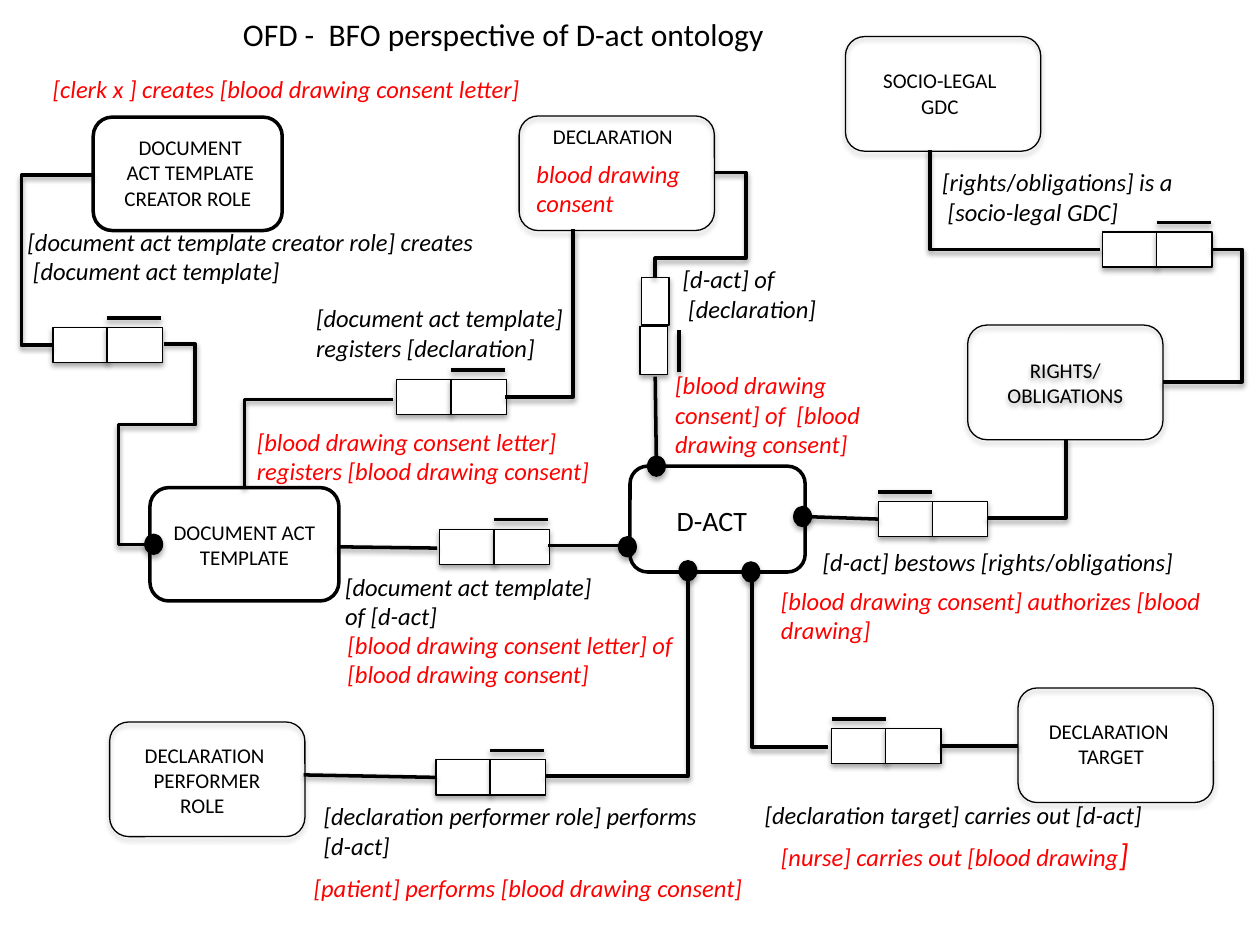
from dataclasses import dataclass
from lxml.etree import SubElement
from pptx import Presentation
from pptx.dml.color import RGBColor
from pptx.enum.shapes import MSO_CONNECTOR, MSO_SHAPE
from pptx.enum.text import MSO_ANCHOR, PP_ALIGN
from pptx.oxml.ns import qn
from pptx.util import Inches, Pt


@dataclass(frozen=True)
class Theme:
    font: str = "Calibri"
    black: RGBColor = RGBColor(0, 0, 0)
    white: RGBColor = RGBColor(255, 255, 255)
    red: RGBColor = RGBColor(255, 0, 0)
    title: int = 18
    act: int = 16
    relation: int = 14
    node: int = 12
    thick: float = 2
    thin: float = 0.75


T = Theme()
UNIT = Inches(0.1)  # the grid has 100 columns and 75 rows
CELL_W, CELL_H, PITCH = 4.4, 2.8, 4.3
NODE_W, NODE_H = 15.5, 9.1
DOT_W, DOT_H = 1.4, 1.6


def add_shadow(spPr, alpha):
    effects = spPr.find(qn("a:effectLst"))
    if effects is None:
        effects = SubElement(spPr, qn("a:effectLst"))
    shadow = SubElement(effects, qn("a:outerShdw"), blurRad="39400", dist="22900",
                        dir="5400000", rotWithShape="0")
    color = SubElement(shadow, qn("a:srgbClr"), val="000000")
    SubElement(color, qn("a:alpha"), val=str(alpha * 1000))


def write(tf, lines, size, color=T.black, italic=False, align=None):
    for i, line in enumerate(lines):
        p = tf.paragraphs[0] if i == 0 else tf.add_paragraph()
        p.alignment = align
        # slashes stay upright in italic labels
        for part in filter(None, line.partition("/") if italic else [line]):
            r = p.add_run()
            r.text = part
            fmt = {"name": T.font, "size": Pt(size), "italic": italic and part != "/"}
            for key, value in fmt.items():
                setattr(r.font, key, value)
            r.font.color.rgb = color


class Area:
    """A region of the slide; its parts are placed in grid units from its corner."""

    def __init__(self, shapes, left, top):
        self.shapes, self.left, self.top = shapes, left, top

    def at(self, x, y):
        return round((self.left + x) * UNIT), round((self.top + y) * UNIT)

    def shape(self, kind, x, y, w, h, fill=None, width=T.thin, shadow=True):
        sp = self.shapes.add_shape(kind, *self.at(x, y), round(w * UNIT), round(h * UNIT))
        if fill is None:
            sp.fill.background()
        else:
            sp.fill.solid()
            sp.fill.fore_color.rgb = fill
        sp.line.color.rgb, sp.line.width = T.black, Pt(width)
        sp.shadow.inherit = False
        if shadow:
            add_shadow(sp._element.spPr, 35)
        return sp

    def node(self, x, y):
        return self.shape(MSO_SHAPE.ROUNDED_RECTANGLE, x, y, NODE_W, NODE_H)

    def bold_node(self, x, y, w, h):
        return self.shape(MSO_SHAPE.FLOWCHART_ALTERNATE_PROCESS, x, y, w, h,
                          T.white, T.thick, False)

    def dot(self, x, y):
        self.shape(MSO_SHAPE.OVAL, x, y, DOT_W, DOT_H, T.black)

    def text(self, x, y, w, h, lines, size, wrap=True, **style):
        sp = self.shapes.add_textbox(*self.at(x, y), round(w * UNIT), round(h * UNIT))
        sp.text_frame.word_wrap = wrap
        write(sp.text_frame, lines, size, **style)
        return sp.text_frame

    def name(self, x, y, w, h, *lines, wrap=True):
        self.text(x, y, w, h, lines, T.node, wrap, align=PP_ALIGN.CENTER)

    def relation(self, x, y, w, h, *lines, color=T.black, wrap=True):
        return self.text(x, y, w, h, lines, T.relation, wrap, color=color, italic=True)

    def example(self, *args, **kwargs):
        return self.relation(*args, color=T.red, **kwargs)

    def line(self, start, end, kind=MSO_CONNECTOR.STRAIGHT):
        cxn = self.shapes.add_connector(kind, *self.at(*start), *self.at(*end))
        cxn.line.color.rgb, cxn.line.width = T.black, Pt(T.thick)
        add_shadow(cxn._element.spPr, 38)
        return cxn

    def route(self, start, end, *turns):
        """Elbow line leaving sideways; turns are alternate x and y positions."""
        cxn = self.line(start, end, MSO_CONNECTOR.ELBOW)
        geom = cxn._element.spPr.find(qn("a:prstGeom"))
        geom.set("prst", f"bentConnector{len(turns) + 2}")
        guides = geom.find(qn("a:avLst"))
        for i, turn in enumerate(turns):
            a, b = start[i % 2], end[i % 2]
            share = round((turn - a) / (b - a) * 100000)
            SubElement(guides, qn("a:gd"), name=f"adj{i + 1}", fmla=f"val {share}")

    def roles(self, x, y, bar):
        """Two role cells side by side, with a bar above cell 0 or 1."""
        for i in range(2):
            self.shape(MSO_SHAPE.RECTANGLE, x + i * PITCH, y, CELL_W, CELL_H, T.white)
        bar_x = x + bar * PITCH
        self.line((bar_x, y - 0.75), (bar_x + PITCH, y - 0.75))


def creator(a):
    a.bold_node(7.4, 4.3, 15, 9)
    a.name(8.5, 5.2, 13.2, 7.1, "DOCUMENT ACT TEMPLATE CREATOR ROLE ")
    a.roles(4.2, 21, 1)
    a.route((7.4, 8.9), (4.2, 22.4), 1.7)
    a.route((13, 22.3), (11.9, 38.2), 15.5, 28.7, 9.4)
    a.relation(1.2, 12.5, 38.4, 5.7, "[document act template creator role] creates",
               " [document act template]")
    a.example(3.2, 0.4, 40.3, 3.4, "[clerk x ] creates [blood drawing consent letter]")


def template(a):
    sp = a.bold_node(1.9, 20.7, 15, 9)
    sp.text_frame.vertical_anchor = MSO_ANCHOR.MIDDLE
    write(sp.text_frame, ["DOCUMENT ACT TEMPLATE"], T.node, align=PP_ALIGN.CENTER)
    a.dot(1.5, 24.4)
    # registers the declaration
    a.roles(21.5, 12.1, 1)
    a.route((21.2, 13.7), (9.4, 20.7))
    a.route((30.1, 13.5), (35.5, 0.2))
    a.relation(14.1, 5.6, 24.5, 5.7, "[document act template]", "registers [declaration]")
    a.example(9.4, 15.4, 29.7, 5.7, "[blood drawing consent letter]",
              "registers [blood drawing consent]")
    # of the act
    a.roles(24.9, 24, 1)
    a.line((24.7, 25.5), (16.8, 25.4))
    a.line((40, 25.3), (33.5, 25.3))
    a.relation(16.4, 26.9, 24.4, 5.7, "[document act template]", "of [d-act]")
    a.example(16.6, 31.5, 31.6, 5.7, "[blood drawing consent letter] of [blood drawing consent]")


def declaration(a):
    a.node(1.2, 0.2)
    a.text(2.9, 0.3, 11.8, 3, ["DECLARATION"], T.node, False)
    a.example(1.6, 3.1, 14, 5.7, "blood drawing", "consent", wrap=False)
    # upright pair of role cells
    for x, y in ((10.9, 13), (10.8, 16.9)):
        a.shape(MSO_SHAPE.RECTANGLE, x, y, 2.2, 3.8, T.white)
    a.line((13.9, 17.2), (13.9, 20.5))
    a.route((16.7, 4.7), (12, 13), 19.2, 11.5)
    a.line((12, 20.9), (12.1, 28.2))
    a.relation(13.2, 11.5, 14.5, 5.7, "[d-act] of", " [declaration]")
    a.example(12.6, 19.9, 21.1, 8.1, "[blood drawing consent] of  [blood drawing consent]")


def rights(a):
    a.node(7.1, 2.9)
    a.name(7.8, 4.9, 13.6, 5, "SOCIO-LEGAL GDC")
    sp = a.node(16.8, 25.8)
    sp.text_frame.vertical_anchor = MSO_ANCHOR.MIDDLE
    write(sp.text_frame, ["RIGHTS/OBLIGATIONS"], T.node, align=PP_ALIGN.CENTER)
    # is a
    a.roles(27.5, 18.4, 1)
    a.route((27.3, 19.8), (13.8, 11.9))
    a.route((36.1, 19.8), (32.3, 30.3), 38.6)
    a.relation(13.8, 12.8, 24.4, 5.7, "[rights/obligations] is a", " [socio-legal GDC]")
    # bestows
    a.roles(9.7, 39.8, 0)
    a.line((9.7, 41.2), (3.9, 41))
    a.route((18.3, 41.1), (24.6, 34.9))
    a.relation(4.3, 42.9, 30.4, 3.4, "[d-act] bestows [rights/obligations]")
    a.example(1, 46, 37.3, 5.7, "[blood drawing consent] authorizes [blood drawing]")


def performer(a):
    a.node(0.7, 12.3)
    a.name(2.1, 13.4, 12.3, 7.1, "DECLARATION", " PERFORMER ROLE ")
    a.roles(26.6, 15.3, 1)
    a.route((35.3, 16.6), (46.6, 0.6))
    a.line((26.6, 16.7), (16.1, 16.5))
    a.relation(16.7, 18.1, 32, 5.7, "[declaration performer role] performs [d-act]")
    a.example(15.9, 23.8, 36.9, 3.4, "[patient] performs [blood drawing consent]", wrap=False)


def target(a):
    a.node(21.8, 9.6)
    a.name(23.1, 11.5, 11.8, 5, "DECLARATION", " TARGET", wrap=False)
    a.roles(7, 12.8, 0)
    a.route((6.7, 14.3), (0.7, 0.6))
    a.line((15.6, 14.2), (21.8, 14.2))
    a.relation(0.7, 18, 32.7, 3.4, "[declaration target] carries out [d-act]", wrap=False)
    tf = a.example(2, 20.8, 34.3, 4, "[nurse] carries out [blood drawing")
    r = tf.paragraphs[0].add_run()
    r.text = "]"
    for key, value in {"name": T.font, "size": Pt(T.title), "italic": True}.items():
        setattr(r.font, key, value)
    r.font.color.rgb = T.red


def act(a):
    a.bold_node(1, 1, 13.9, 8.4)
    a.text(2.8, 3.5, 9.4, 3.7, ["D-ACT"], T.act, align=PP_ALIGN.CENTER)
    for x, y in ((0.1, 6.6), (14, 4.2), (4.9, 8.5), (9.9, 8.6), (2.4, 0.2)):
        a.dot(x, y)


def title(a):
    a.text(0, 0, 49.5, 4, ["OFD -  BFO perspective of D-act ontology"], T.title)


def main():
    prs = Presentation()
    prs.slide_width, prs.slide_height = 100 * UNIT, 75 * UNIT
    s = prs.slides.add_slide(prs.slide_layouts[6])
    regions = ((title, 18.3, 0.7), (creator, 0, 5), (template, 10, 18), (declaration, 40, 9),
               (rights, 60, 0), (performer, 8, 45), (target, 59, 45), (act, 49, 36))
    for draw, left, top in regions:
        draw(Area(s.shapes, left, top))
    prs.save("out.pptx")


if __name__ == "__main__":
    main()
